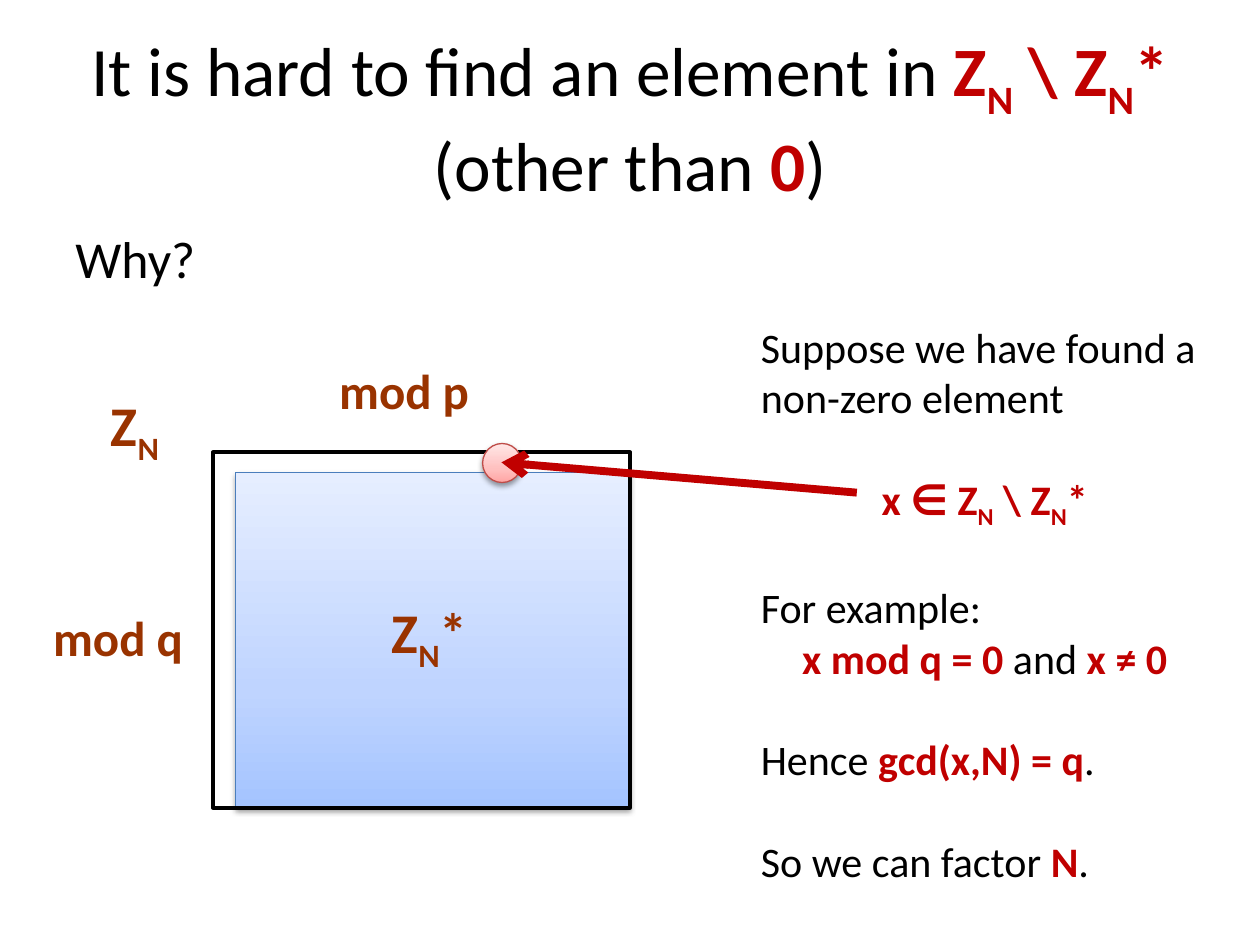
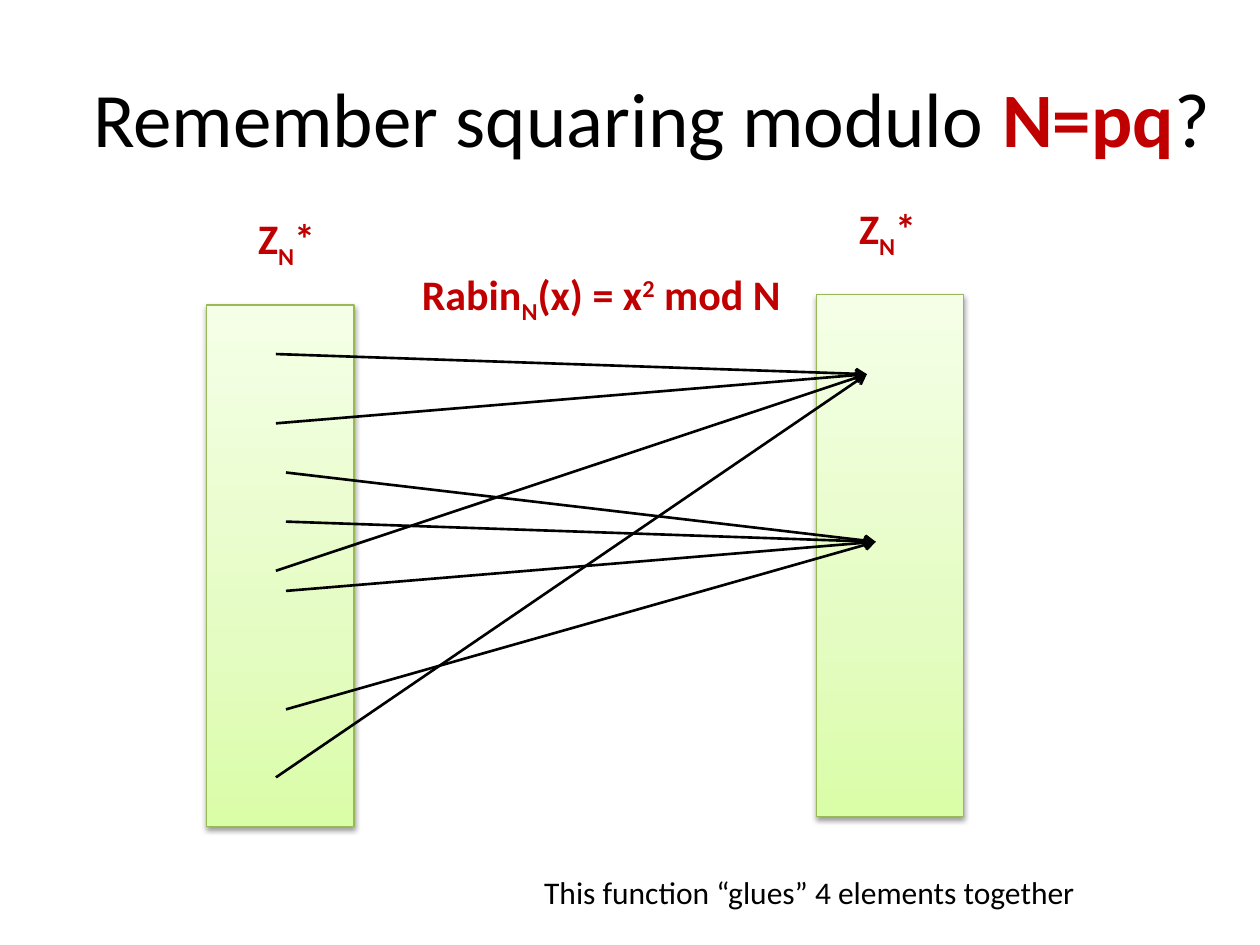
from copy import deepcopy
from dataclasses import dataclass

from lxml.etree import SubElement
from pptx import Presentation
from pptx.dml.color import RGBColor
from pptx.enum.shapes import MSO_CONNECTOR, MSO_SHAPE
from pptx.enum.text import MSO_ANCHOR, MSO_AUTO_SIZE, PP_ALIGN
from pptx.oxml.ns import qn
from pptx.util import Inches, Pt


@dataclass(frozen=True)
class Theme:
    font: str = "Calibri"
    ink: str = "000000"
    accent: str = "C00000"
    label: str = "993300"
    blue: tuple = ("A4C4FF", "BFD4FF", "E6EEFF")
    blue_edge: str = "4B7EBC"
    red: tuple = ("FFA6A5", "FFC0BF", "FFE7E7")
    red_edge: str = "BF4C48"
    green: tuple = ("DAFDA7", "E4FCC2", "F5FFE7")
    green_edge: str = "98B955"
    title: float = 44
    tight_title: float = 39.6
    question: float = 29.6
    set_name: float = 32
    axis: float = 28
    text: float = 24
    note: float = 18


@dataclass(frozen=True)
class Span:
    text: str
    strong: bool = False
    baseline: int = 0


THEME = Theme()


def key(text):
    return Span(text, True)


def sub(text):
    return Span(text, True, -25)


def sup(text):
    return Span(text, True, 30)


Z_N = [key("Z"), sub("N")]
Z_N_STAR = Z_N + [key("*")]
DIFFERENCE = Z_N + [key(" \\ ")] + Z_N_STAR


def rgb(color):
    return RGBColor.from_string(color)


def write(paragraph, spans, size, strong_color, align=PP_ALIGN.LEFT):
    paragraph.alignment = align
    paragraph.font.name = THEME.font
    paragraph.font.size = Pt(size)
    uniform = len({span.strong for span in spans}) == 1
    if uniform:
        set_emphasis(paragraph.font, spans[0].strong, strong_color)
    for span in spans:
        run = paragraph.add_run()
        run.text = span.text
        if not uniform:
            set_emphasis(run.font, span.strong, strong_color)
        if span.baseline:
            run.font._element.set("baseline", str(span.baseline * 1000))


def set_emphasis(font, strong, strong_color):
    font.bold = strong
    font.color.rgb = rgb(strong_color if strong else THEME.ink)


def add_frame(slide, box, wrap=True):
    frame = slide.shapes.add_textbox(*map(Inches, box)).text_frame
    frame.word_wrap = wrap
    return frame


def add_title(slide, spans, size, width=9):
    frame = add_frame(slide, (0.5, 0.3, width, 1.25))
    frame.vertical_anchor = MSO_ANCHOR.MIDDLE
    write(frame.paragraphs[0], spans, size, THEME.accent, PP_ALIGN.CENTER)


def add_label(slide, box, spans, size, color=THEME.accent, align=PP_ALIGN.LEFT):
    frame = add_frame(slide, box, wrap=False)
    frame.auto_size = MSO_AUTO_SIZE.SHAPE_TO_FIT_TEXT
    write(frame.paragraphs[0], spans, size, color, align)


def add_argument(slide, box, steps):
    frame = add_frame(slide, box)
    for index, (spans, align, starts_block) in enumerate(steps):
        paragraph = frame.paragraphs[0] if index == 0 else frame.add_paragraph()
        write(paragraph, spans, THEME.text, THEME.accent, align)
        if starts_block:
            paragraph.space_before = Pt(29.3)


def add_outline(slide, kind, box, color, width):
    shape = slide.shapes.add_shape(kind, *map(Inches, box))
    shape.shadow.inherit = False
    shape.fill.background()
    shape.line.color.rgb = rgb(color)
    shape.line.width = Pt(width)
    return shape


def add_glossy(slide, kind, box, colors, edge):
    shape = add_outline(slide, kind, box, edge, 0.75)
    shape.fill.gradient()
    shape.fill.gradient_angle = 90
    properties = shape.element.spPr
    stop_list = properties.find(".//" + qn("a:gsLst"))
    stop_list.append(deepcopy(stop_list[0]))
    for stop, color, position in zip(shape.fill.gradient_stops, colors, (0, 0.35, 1)):
        stop.color.rgb = rgb(color)
        stop.position = position
    shadow = SubElement(
        properties.find(qn("a:effectLst")), qn("a:outerShdw"),
        blurRad=str(Pt(3.1)), dist=str(Pt(1.6)), dir="5400000", rotWithShape="0",
    )
    shade = SubElement(shadow, qn("a:srgbClr"), val=THEME.ink)
    SubElement(shade, qn("a:alpha"), val="38000")


def add_arrow(slide, start, end, color, width):
    arrow = slide.shapes.add_connector(
        MSO_CONNECTOR.STRAIGHT, *map(Inches, start + end)
    )
    arrow.line.color.rgb = rgb(color)
    arrow.line.width = Pt(width)
    properties = arrow._element.spPr
    SubElement(properties.find(qn("a:ln")), qn("a:tailEnd"), type="arrow")
    SubElement(properties, qn("a:effectLst"))


def build_hard_element(slide):
    add_title(
        slide,
        [Span("It is hard to find an element in ")] + DIFFERENCE
        + [key(" "), Span("(other than "), key("0"), Span(")")],
        THEME.tight_title,
    )
    question = add_frame(slide, (0.5, 1.75, 9, 0.52))
    write(question.paragraphs[0], [Span("Why?")], THEME.question, THEME.accent)

    add_glossy(slide, MSO_SHAPE.RECTANGLE, (1.87, 3.75, 3.13, 2.66),
               THEME.blue, THEME.blue_edge)
    for box, spans, size in (
        ((0.75, 3.05, 0.61, 0.64), Z_N, THEME.set_name),
        ((2.97, 4.69, 0.84, 0.64), Z_N_STAR, THEME.set_name),
        ((2.58, 2.81, 1.24, 0.57), [key("mod p")], THEME.axis),
        ((0.31, 4.77, 1.24, 0.57), [key("mod q")], THEME.axis),
    ):
        add_label(slide, box, spans, size, THEME.label, PP_ALIGN.RIGHT)
    add_outline(slide, MSO_SHAPE.RECTANGLE, (1.69, 3.59, 3.31, 2.82), THEME.ink, 2.25)

    left, center = PP_ALIGN.LEFT, PP_ALIGN.CENTER
    add_argument(slide, (5.94, 2.5, 3.75, 4.54), [
        ([Span("Suppose we have found a non-zero element")], left, False),
        ([key("x ∈ ")] + DIFFERENCE, center, True),
        ([Span("For example:")], left, True),
        ([key("x mod q = 0 "), Span("and "), key("x ≠ 0")], center, False),
        ([Span("Hence "), key("gcd(x,N) = q"), Span(".")], left, True),
        ([Span("So we can factor "), key("N"), Span(".")], left, True),
    ])
    add_glossy(slide, MSO_SHAPE.OVAL, (3.83, 3.52, 0.31, 0.31),
               THEME.red, THEME.red_edge)
    add_arrow(slide, (6.8, 3.91), (3.98, 3.67), THEME.accent, 4.5)


def build_squaring(slide):
    add_title(
        slide,
        [Span("Remember squaring modulo "), key("N=pq"), Span("?")],
        THEME.title, width=9.34,
    )
    for left, top in ((1.64, 2.42), (6.48, 2.34)):
        add_glossy(slide, MSO_SHAPE.RECTANGLE, (left, top, 1.17, 4.14),
                   THEME.green, THEME.green_edge)
    for left, top in ((1.95, 1.64), (6.72, 1.56)):
        add_label(slide, (left, top, 0.68, 0.5), Z_N_STAR, THEME.text)

    for root_x, root_ys, square in (
        (2.19, (2.81, 6.17, 3.36, 4.53), (6.88, 2.97)),
        (2.27, (4.14, 3.75, 4.69, 5.63), (6.95, 4.3)),
    ):
        for root_y in root_ys:
            add_arrow(slide, (root_x, root_y), square, THEME.ink, 1.5)

    add_label(
        slide, (3.25, 2.08, 3.16, 0.5),
        [key("Rabin"), sub("N"), key("(x) = x"), sup("2"), key(" mod N")],
        THEME.text,
    )
    add_label(slide, (4.22, 6.88, 4.52, 0.4),
              [Span("This function “glues” 4 elements together")], THEME.note)


def main():
    deck = Presentation()
    deck.slide_width = Inches(10)
    deck.slide_height = Inches(7.5)
    blank = deck.slide_layouts[6]
    for build in (build_hard_element, build_squaring):
        build(deck.slides.add_slide(blank))
    deck.save("out.pptx")


if __name__ == "__main__":
    main()
